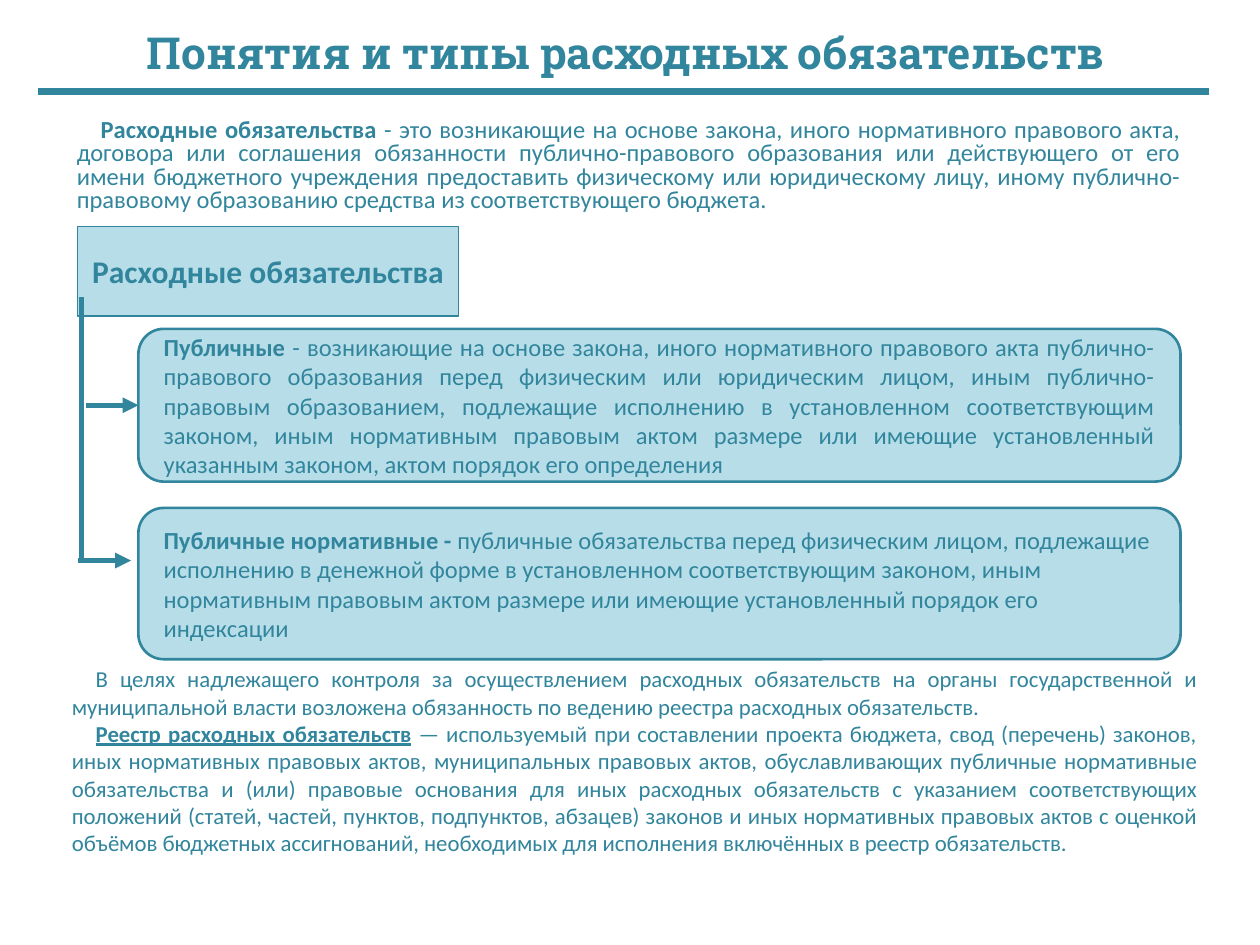
"""Build a slide on the concept and types of expenditure obligations."""
from dataclasses import dataclass, field
from typing import Any, Optional

from lxml.etree import SubElement
from pptx import Presentation
from pptx.dml.color import RGBColor
from pptx.enum.shapes import MSO_CONNECTOR as Link, MSO_SHAPE as Preset
from pptx.enum.text import MSO_ANCHOR as Anchor, PP_ALIGN as Align
from pptx.oxml.ns import qn
from pptx.util import Cm, Pt

TEAL = RGBColor(0x31, 0x85, 0x9C)
PALE_BLUE = RGBColor(0xB7, 0xDE, 0xE8)
BOLD = {"bold": True}
FIRST_LINE = Cm(0.48)


@dataclass(frozen=True)
class Run:
    text: str
    style: dict[str, Any] = field(default_factory=dict)


@dataclass(frozen=True)
class Block:
    left: float
    top: float
    width: float
    height: float
    paragraphs: list[list[Run]]
    size: float
    preset: Optional[Preset] = None
    border: float = 0
    font: str = "Calibri"
    indent: int = 0
    frame: dict[str, Any] = field(default_factory=dict)
    layout: dict[str, Any] = field(default_factory=dict)


@dataclass(frozen=True)
class Stroke:
    x1: float
    y1: float
    x2: float
    y2: float
    weight: float = 3
    arrow: bool = False


def apply(target: Any, values: dict[str, Any]) -> None:
    for name, value in values.items():
        setattr(target, name, value)


def draw_block(shapes: Any, block: Block) -> Any:
    place = [Cm(v) for v in (block.left, block.top, block.width, block.height)]
    if block.preset is None:
        shape = shapes.add_textbox(*place)
    else:
        shape = shapes.add_shape(block.preset, *place)
        shape.shadow.inherit = False
        shape.fill.solid()
        shape.fill.fore_color.rgb = PALE_BLUE
        shape.line.color.rgb = TEAL
        shape.line.width = Pt(block.border)
    frame = shape.text_frame
    apply(frame, {"word_wrap": True, "vertical_anchor": Anchor.MIDDLE} | block.frame)
    for number, runs in enumerate(block.paragraphs):
        paragraph = frame.add_paragraph() if number else frame.paragraphs[0]
        apply(paragraph, {"alignment": Align.JUSTIFY} | block.layout)
        if block.indent:
            paragraph._p.get_or_add_pPr().set("indent", str(block.indent))
        for part in runs:
            run = paragraph.add_run()
            run.text = part.text
            apply(run.font, {"name": block.font, "size": Pt(block.size)} | part.style)
            run.font.color.rgb = TEAL
    return shape


def draw_stroke(shapes: Any, stroke: Stroke) -> Any:
    ends = [Cm(v) for v in (stroke.x1, stroke.y1, stroke.x2, stroke.y2)]
    line = shapes.add_connector(Link.STRAIGHT, *ends)
    line.line.color.rgb = TEAL
    line.line.width = Pt(stroke.weight)
    if stroke.arrow:
        SubElement(line.line._get_or_add_ln(), qn("a:tailEnd"), type="triangle")
    SubElement(line._element.spPr, qn("a:effectLst"))
    return line


TYPE_INSETS = {"margin_left": Cm(0.36), "margin_right": Cm(0.36)}
TYPE_BOX = {"size": 14, "preset": Preset.ROUNDED_RECTANGLE, "border": 1.5, "frame": TYPE_INSETS}

TITLE = Block(
    1.19, 0.41, 22.86, 1.27,
    [[Run("Понятия и типы расходных обязательств", BOLD)]],
    25.2, font="Roboto Slab", layout={"alignment": Align.CENTER},
)
DEFINITION = Block(
    1.3, 2.16, 22.76, 2.39,
    [[
        Run("Расходные обязательства", BOLD),
        Run(" - это возникающие на основе закона, иного нормативного правового акта, "
            "договора или соглашения обязанности публично-правового образования или "
            "действующего от его имени бюджетного учреждения предоставить физическому "
            "или юридическому лицу, иному публично-правовому образованию средства из "
            "соответствующего бюджета."),
    ]],
    14, indent=FIRST_LINE, layout={"line_spacing": 0.8, "space_before": Pt(2.8)},
)
PUBLIC = Block(
    2.79, 6.63, 21.01, 3.08,
    [[
        Run("Публичные", BOLD),
        Run(" - возникающие на основе закона, иного нормативного правового акта "
            "публично-правового образования перед физическим или юридическим лицом, "
            "иным публично-правовым образованием, подлежащие исполнению в установленном "
            "соответствующим законом, иным нормативным правовым актом размере или "
            "имеющие установленный указанным законом, актом порядок его определения"),
    ]],
    **TYPE_BOX,
)
NORMATIVE = Block(
    2.79, 10.24, 21.01, 3.05,
    [[
        Run("Публичные нормативные -", BOLD),
        Run(" публичные обязательства перед физическим лицом, подлежащие исполнению "
            "в денежной форме в установленном соответствующим законом, иным нормативным "
            "правовым актом размере или имеющие установленный порядок его индексации"),
    ]],
    layout={"alignment": Align.LEFT}, **TYPE_BOX,
)
REGISTER = Block(
    1.4, 13.28, 22.76, 4.19,
    [
        [Run("В целях надлежащего контроля за осуществлением расходных обязательств на "
             "органы государственной и муниципальной власти возложена обязанность по "
             "ведению реестра расходных обязательств.")],
        [
            Run("Реестр расходных обязательств", BOLD | {"underline": True}),
            Run(" — используемый при составлении проекта бюджета, свод (перечень) законов, "
                "иных нормативных правовых актов, муниципальных правовых актов, "
                "обуславливающих публичные нормативные обязательства и (или) правовые "
                "основания для иных расходных обязательств с указанием соответствующих "
                "положений (статей, частей, пунктов, подпунктов, абзацев) законов и иных "
                "нормативных правовых актов с оценкой объёмов бюджетных ассигнований, "
                "необходимых для исполнения включённых в реестр обязательств."),
        ],
    ],
    13, indent=FIRST_LINE,
    frame={"vertical_anchor": Anchor.TOP, "margin_left": Cm(0.05), "margin_right": Cm(0.05)},
)
OBLIGATIONS = Block(
    1.57, 4.57, 7.67, 1.8,
    [[Run("Расходные обязательства", BOLD)]],
    18, Preset.RECTANGLE, 0.75, layout={"alignment": Align.CENTER},
)

TITLE_RULE = Stroke(0.76, 1.85, 24.38, 1.85, weight=3.75)
TRUNK = Stroke(1.65, 5.99, 1.65, 11.28)
PUBLIC_ARROW = Stroke(1.73, 8.17, 2.79, 8.17, arrow=True)
NORMATIVE_ARROW = Stroke(1.57, 11.3, 2.64, 11.3, arrow=True)


def main() -> None:
    deck = Presentation()
    apply(deck, {"slide_width": Cm(25.4), "slide_height": Cm(19.05)})
    shapes = deck.slides.add_slide(deck.slide_layouts[6]).shapes
    draw_block(shapes, TITLE)
    draw_block(shapes, DEFINITION)
    draw_stroke(shapes, TITLE_RULE)
    public_box = draw_block(shapes, PUBLIC)
    for block in (NORMATIVE, REGISTER, OBLIGATIONS):
        draw_block(shapes, block)
    draw_stroke(shapes, TRUNK)
    draw_stroke(shapes, PUBLIC_ARROW).end_connect(public_box, 1)
    draw_stroke(shapes, NORMATIVE_ARROW)
    deck.save("out.pptx")


if __name__ == "__main__":
    main()
